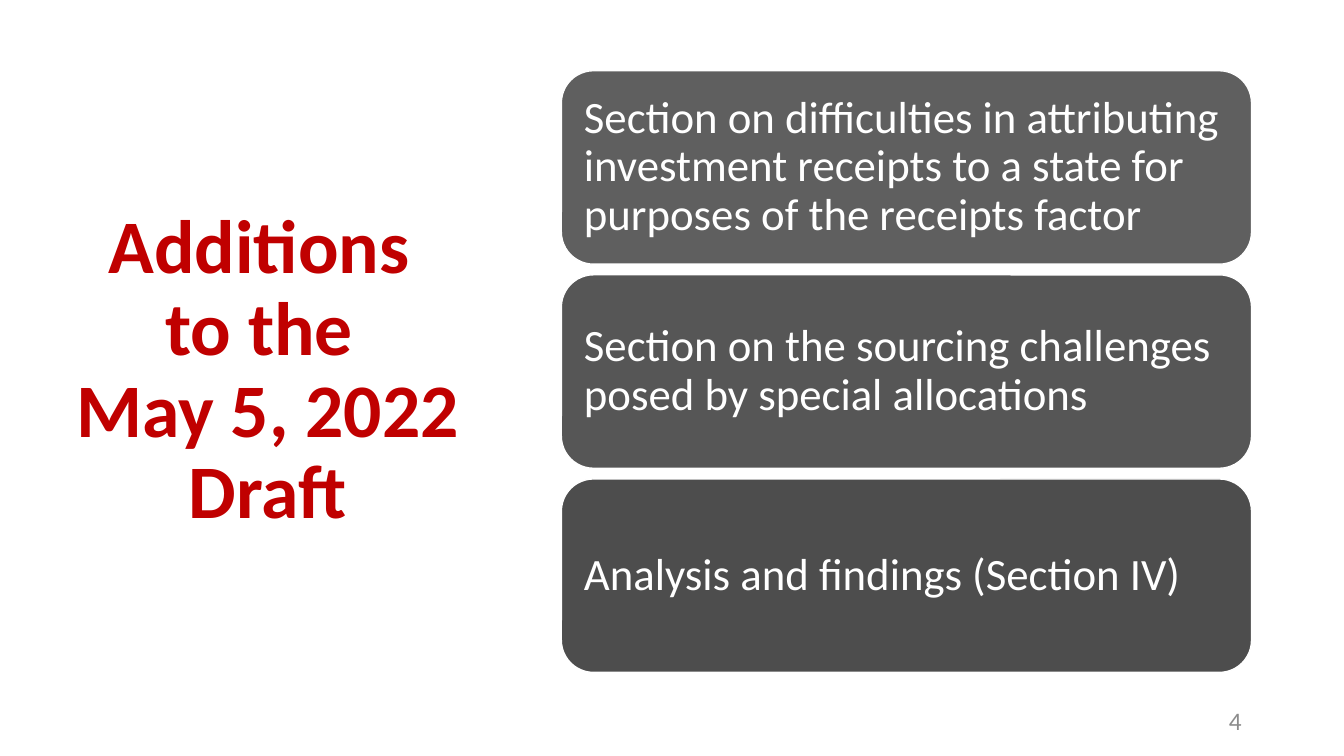
from dataclasses import dataclass

from pptx import Presentation
from pptx.dml.color import RGBColor
from pptx.enum.shapes import MSO_SHAPE
from pptx.enum.text import MSO_ANCHOR, MSO_AUTO_SIZE, PP_ALIGN
from pptx.util import Pt

COLORS = {
    "title": "C00000",
    "number": "8C8C8C",
    "white": "FFFFFF",
    "card_light": "5F5F5F",
    "card_mid": "565656",
    "card_dark": "4D4D4D",
}
CARD_LEFT, CARD_TOP, CARD_WIDTH, CARD_HEIGHT, CARD_PITCH = 401, 50.5, 493, 138.2, 145.8


@dataclass(frozen=True)
class Card:
    text: str
    fill: str


CARDS = [
    Card("Section on difficulties in attributing investment receipts to a state "
         "for purposes of the receipts factor", "card_light"),
    Card("Section on the sourcing challenges posed by special allocations", "card_mid"),
    Card("Analysis and findings (Section IV)", "card_dark"),
]


def rgb(name: str) -> RGBColor:
    return RGBColor.from_string(COLORS[name])


def set_text(sp, text: str, *, size: float, color: str, bold: bool = False,
             align=PP_ALIGN.LEFT, spacing: float = 1.0,
             inset_x: float = 7.2, inset_y: float = 3.6) -> None:
    tf = sp.text_frame
    tf.text = text
    tf.word_wrap = True
    tf.auto_size = MSO_AUTO_SIZE.NONE
    tf.vertical_anchor = MSO_ANCHOR.MIDDLE
    tf.margin_left = tf.margin_right = Pt(inset_x)
    tf.margin_top = tf.margin_bottom = Pt(inset_y)
    p = tf.paragraphs[0]
    p.alignment = align
    p.line_spacing = spacing
    for r in p.runs:
        r.font.name = "Calibri"
        r.font.size = Pt(size)
        r.font.bold = bold
        r.font.color.rgb = rgb(color)


def add_card(s, card: Card, top: float) -> None:
    sp = s.shapes.add_shape(MSO_SHAPE.ROUNDED_RECTANGLE, Pt(CARD_LEFT), Pt(top),
                            Pt(CARD_WIDTH), Pt(CARD_HEIGHT))
    sp.shadow.inherit = False
    sp.fill.solid()
    sp.fill.fore_color.rgb = rgb(card.fill)
    sp.line.color.rgb = rgb("white")
    sp.line.width = Pt(1)
    set_text(sp, card.text, size=32, color="white", spacing=0.9, inset_x=9.4)


def main() -> None:
    """Build the slide on additions to the draft and save it."""
    prs = Presentation()
    prs.slide_width, prs.slide_height = Pt(960), Pt(540)
    s = prs.slides.add_slide(prs.slide_layouts[5])

    title = s.shapes.title
    title.left, title.top, title.width, title.height = Pt(41.4), Pt(48.8), Pt(299.5), Pt(433.4)
    set_text(title, "Additions \vto the \vMay 5, 2022 Draft", size=54, color="title",
             bold=True, align=PP_ALIGN.CENTER, spacing=0.9)

    number = s.shapes.add_textbox(Pt(678), Pt(500.4), Pt(216), Pt(28.8))
    set_text(number, "4", size=18, color="number", align=PP_ALIGN.RIGHT)

    for i, card in enumerate(CARDS):
        add_card(s, card, CARD_TOP + i * CARD_PITCH)

    prs.save("out.pptx")


if __name__ == "__main__":
    main()
